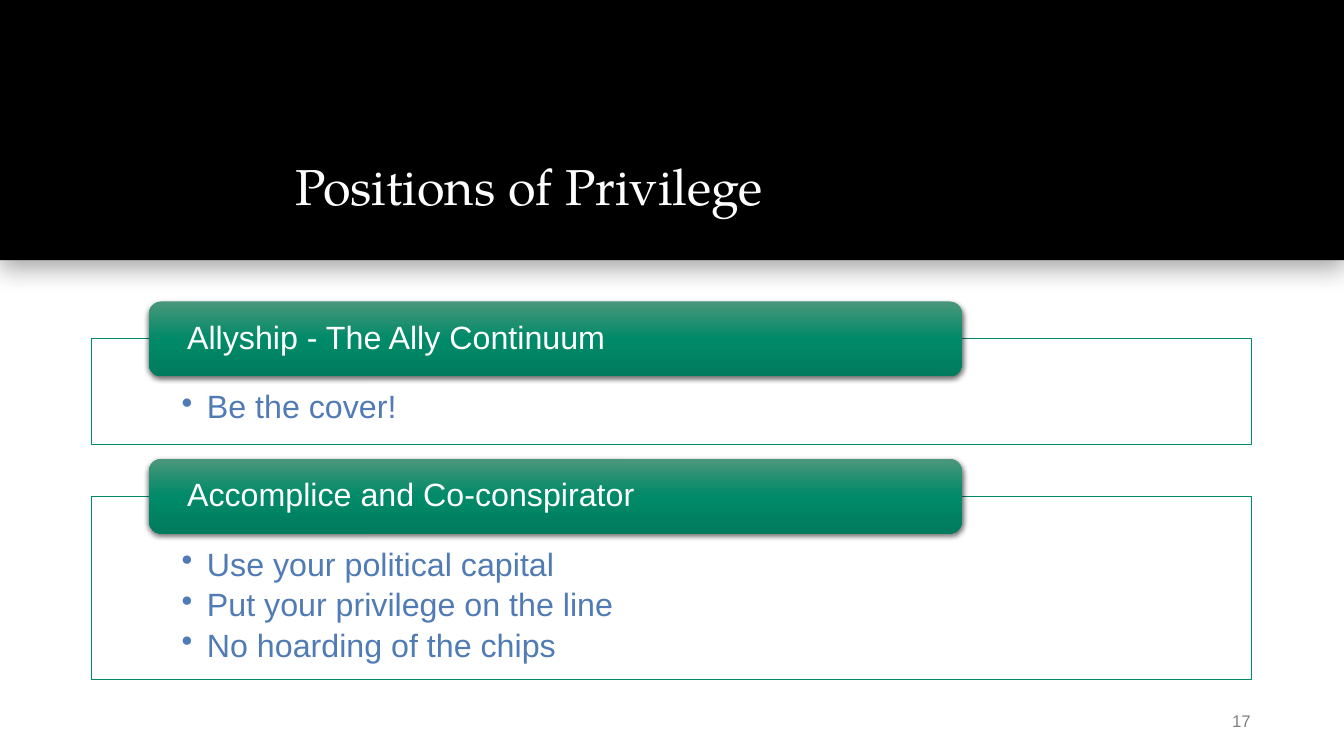
"""Build the Positions of Privilege slide."""
import pptx
import pptx.dml.color
import pptx.enum.shapes
import pptx.enum.text
import pptx.oxml
import pptx.oxml.ns
import pptx.util
from dataclasses import dataclass

Pt = pptx.util.Pt
SHAPE = pptx.enum.shapes.MSO_SHAPE
ANCHOR = pptx.enum.text.MSO_ANCHOR
ALIGN = pptx.enum.text.PP_ALIGN

TITLE = "Positions of Privilege"
PAGE_NUMBER = "17"
SECTIONS = [
    ("Allyship - The Ally Continuum", 75.6, ["Be the cover!"]),
    ("Accomplice and Co-conspirator", 131,
     ["Use your political capital", "Put your privilege on the line", "No hoarding of the chips"]),
]


@dataclass(frozen=True)
class Theme:
    """Hold colours, fonts and type sizes."""
    black: str = "000000"
    white: str = "FFFFFF"
    green: str = "008A69"
    blue: str = "507BB5"
    grey: str = "808080"
    gradient: tuple = ((0, "4B977B"), (50, "008A69"), (100, "007B5D"))
    heading_font: str = "TeX Gyre Pagella"
    body_font: str = "Arial"
    title_size: float = 36
    body_size: float = 23
    number_size: float = 12


THEME = Theme()
SLIDE_WIDTH, SLIDE_HEIGHT = 960, 540
BAND_HEIGHT = 185.8
PANEL_LEFT, PANEL_WIDTH = 65.5, 828.7
HEADER_LEFT, HEADER_WIDTH, HEADER_HEIGHT = 106.5, 580.5, 53.5
FIRST_HEADER_TOP = 215.3
HEADER_RISE = 26.6
SECTION_GAP = 10.1
BULLET_INDENT = 18


def rgb(value):
    """Return a colour object."""
    return pptx.dml.color.RGBColor.from_string(value)


def add_xml(parent, markup):
    """Append one drawing element to a parent."""
    namespace = pptx.oxml.ns.nsdecls("a")
    element = pptx.oxml.parse_xml(markup.replace(">", f" {namespace}>", 1))
    parent.append(element)


def add_shadow(shape, opacity, blur, distance):
    """Give a shape a black shadow that falls straight down."""
    add_xml(shape.element.spPr,
            f'<a:effectLst><a:outerShdw blurRad="{Pt(blur)}" dist="{Pt(distance)}" dir="5400000" '
            f'algn="ctr" rotWithShape="0"><a:srgbClr val="{THEME.black}">'
            f'<a:alpha val="{opacity * 1000}"/></a:srgbClr></a:outerShdw></a:effectLst>')


def add_gradient(shape):
    """Fill a shape with the green gradient from top to bottom."""
    stops = "".join(f'<a:gs pos="{position * 1000}"><a:srgbClr val="{colour}"/></a:gs>'
                    for position, colour in THEME.gradient)
    add_xml(shape.element.spPr,
            f'<a:gradFill rotWithShape="1"><a:gsLst>{stops}</a:gsLst>'
            '<a:lin ang="5400000" scaled="0"/></a:gradFill>')


def add_box(slide, kind, left, top, width, height):
    """Add a preset shape."""
    return slide.shapes.add_shape(kind, Pt(left), Pt(top), Pt(width), Pt(height))


def set_frame(shape, anchor, insets):
    """Set wrapping, anchor and insets, and return the text frame."""
    frame = shape.text_frame
    frame.word_wrap = True
    frame.auto_size = pptx.enum.text.MSO_AUTO_SIZE.NONE
    frame.vertical_anchor = anchor
    frame.margin_left, frame.margin_top, frame.margin_right, frame.margin_bottom = map(Pt, insets)
    return frame


def write(paragraph, text, size, colour, font=THEME.body_font, align=ALIGN.LEFT, spacing=0.9):
    """Add one formatted run to a paragraph."""
    paragraph.alignment = align
    paragraph.line_spacing = spacing
    run = paragraph.add_run()
    run.text = text
    run.font.size = Pt(size)
    run.font.name = font
    run.font.color.rgb = rgb(colour)


def add_title(slide):
    """Add the black band and the title above it."""
    band = add_box(slide, SHAPE.RECTANGLE, 0, 0, SLIDE_WIDTH, BAND_HEIGHT)
    band.fill.solid()
    band.fill.fore_color.rgb = rgb(THEME.black)
    band.line.fill.background()
    add_shadow(band, 35, 18, 5)
    slide.shapes.element.insert(2, band.element)
    title = slide.shapes.title
    title.left, title.top, title.width, title.height = Pt(201.6), Pt(31.7), Pt(692.6), Pt(132.5)
    frame = set_frame(title, ANCHOR.BOTTOM, (9.4, 9.4, 9.4, 9.4))
    write(frame.paragraphs[0], TITLE, THEME.title_size, THEME.white, THEME.heading_font)


def add_panel(slide, top, height, bullets):
    """Add an outlined panel with its bullets."""
    panel = add_box(slide, SHAPE.RECTANGLE, PANEL_LEFT, top, PANEL_WIDTH, height)
    panel.shadow.inherit = False
    panel.fill.solid()
    panel.fill.fore_color.rgb = rgb(THEME.white)
    panel.line.color.rgb = rgb(THEME.green)
    panel.line.width = Pt(0.5)
    frame = set_frame(panel, ANCHOR.TOP, (64.3, 37.5, 64.3, 13))
    for index, text in enumerate(bullets):
        paragraph = frame.add_paragraph() if index else frame.paragraphs[0]
        properties = paragraph._p.get_or_add_pPr()
        properties.set("marL", str(Pt(BULLET_INDENT)))
        properties.set("indent", str(-Pt(BULLET_INDENT)))
        add_xml(properties, '<a:buChar char="•"></a:buChar>')
        paragraph.space_after = Pt(4.2)
        write(paragraph, text, THEME.body_size, THEME.blue)


def add_header(slide, top, text):
    """Add a rounded green header."""
    header = add_box(slide, SHAPE.ROUNDED_RECTANGLE, HEADER_LEFT, top, HEADER_WIDTH, HEADER_HEIGHT)
    add_gradient(header)
    header.line.fill.background()
    add_shadow(header, 63, 4.5, 1.5)
    frame = set_frame(header, ANCHOR.MIDDLE, (24.5, 0, 24.5, 0))
    write(frame.paragraphs[0], text, THEME.body_size, THEME.white)


def add_page_number(slide):
    """Add the page number at the lower right."""
    box = slide.shapes.add_textbox(Pt(821.5), Pt(500.4), Pt(72), Pt(28.8))
    frame = set_frame(box, ANCHOR.MIDDLE, (7.2, 3.6, 0, 3.6))
    write(frame.paragraphs[0], PAGE_NUMBER, THEME.number_size, THEME.grey,
          align=ALIGN.RIGHT, spacing=1.0)


def main():
    """Build and save the presentation."""
    presentation = pptx.Presentation()
    presentation.slide_width, presentation.slide_height = Pt(SLIDE_WIDTH), Pt(SLIDE_HEIGHT)
    slide = presentation.slides.add_slide(presentation.slide_layouts[5])
    add_title(slide)
    add_page_number(slide)
    top = FIRST_HEADER_TOP
    for heading, height, bullets in SECTIONS:
        add_panel(slide, top + HEADER_RISE, height, bullets)
        add_header(slide, top, heading)
        top += HEADER_RISE + height + SECTION_GAP
    presentation.save("out.pptx")


if __name__ == "__main__":
    main()
